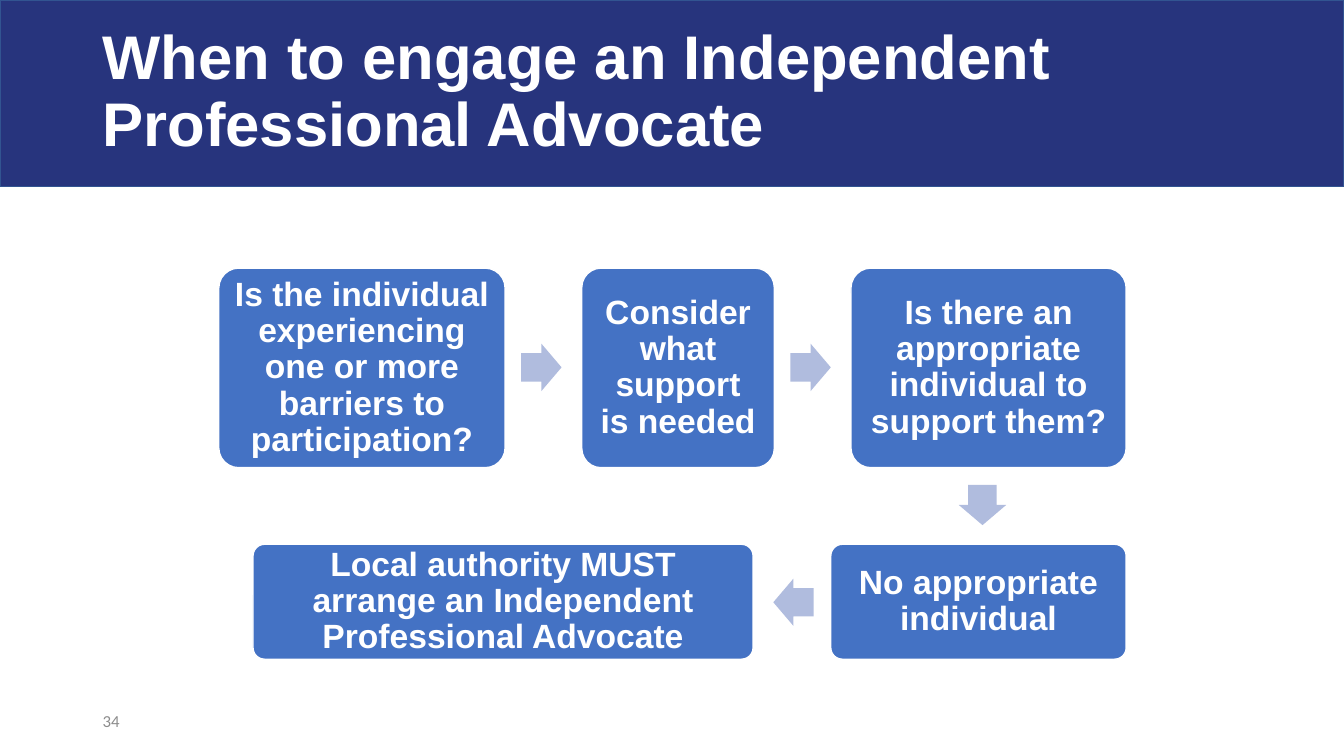
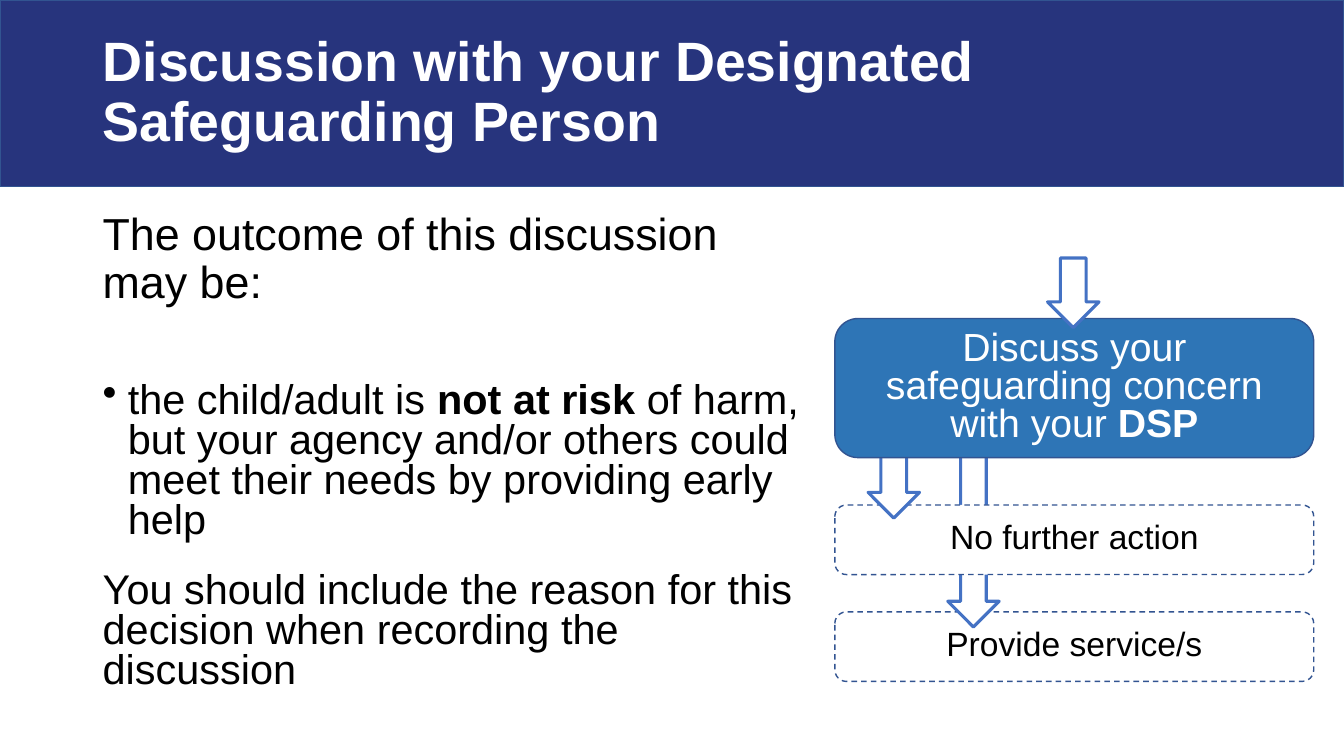
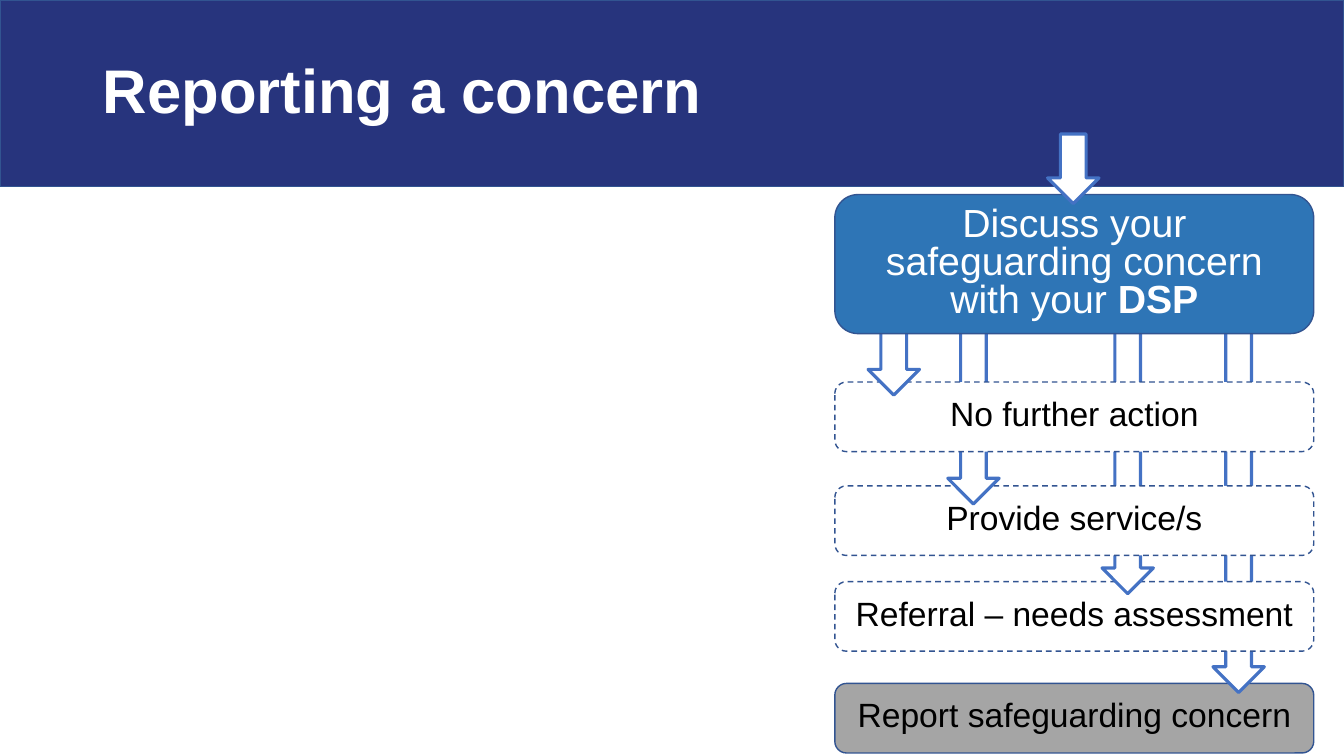
from dataclasses import dataclass

from lxml.etree import SubElement
from pptx import Presentation
from pptx.dml.color import RGBColor
from pptx.enum.dml import MSO_LINE
from pptx.enum.shapes import MSO_SHAPE as Shape
from pptx.enum.text import MSO_ANCHOR as Anchor, PP_ALIGN as Align
from pptx.oxml.ns import qn
from pptx.util import Inches, Pt

COLORS = {
    "navy": "27347D", "edge": "325491", "blue": "4472C4", "pale": "B0BCDE",
    "dsp": "2E75B6", "gray": "A5A5A5", "number": "8C8C8C",
    "white": "FFFFFF", "black": "000000",
}
LEFT = 0.92
CARD_LEFT, CARD_W, CARD_H = 8.28, 4.75, 0.69
DSP_H = 1.38
ARROW_W, ARROW_H = 0.51, 0.69


@dataclass(frozen=True)
class Step:
    text: str
    left: float
    top: float
    width: float
    height: float
    inset: float


@dataclass(frozen=True)
class FlowArrow:
    kind: Shape
    left: float
    top: float
    width: float
    height: float


@dataclass(frozen=True)
class Outcome:
    text: str
    top: float
    arrow_left: float
    arrow_tip: float
    fill: str = "white"
    dashed: bool = True


STEPS = [
    Step("Is the individual experiencing one or more barriers to participation?",
         2.17, 2.66, 2.84, 1.98, 0.16),
    Step("Consider what support is needed", 5.77, 2.66, 1.91, 1.98, 0.16),
    Step("Is there an appropriate individual to support them?",
         8.44, 2.66, 2.73, 1.98, 0.16),
    Step("No appropriate individual", 8.24, 5.4, 2.93, 1.14, 0.13),
    Step("Local authority MUST arrange an Independent Professional Advocate",
         2.51, 5.4, 4.96, 1.14, 0.13),
]
FLOW_ARROWS = [
    FlowArrow(Shape.RIGHT_ARROW, 5.17, 3.41, 0.4, 0.47),
    FlowArrow(Shape.RIGHT_ARROW, 7.84, 3.41, 0.4, 0.47),
    FlowArrow(Shape.DOWN_ARROW, 9.51, 4.81, 0.47, 0.4),
    FlowArrow(Shape.LEFT_ARROW, 7.67, 5.74, 0.4, 0.47),
]
DISCUSSION_OUTCOMES = [
    Outcome("No further action", 5.01, 8.61, 5.14),
    Outcome("Provide service/s", 6.07, 9.4, 6.22),
]
REPORTING_OUTCOMES = [
    Outcome("No further action", 3.79, 8.61, 3.92),
    Outcome("Provide service/s", 4.82, 9.4, 5.0),
    Outcome("Referral – needs assessment", 5.77, 10.93, 5.89),
    Outcome("Report safeguarding concern", 6.78, 12.03, 6.87, "gray", False),
]


def rgb(name: str) -> RGBColor:
    return RGBColor.from_string(COLORS[name])


def write(tf, *texts: str, size: float, color: str = "black", bold: bool = False,
          font: str = "Arial", align=Align.LEFT, anchor=Anchor.MIDDLE,
          spacing: float = 1.0, after: float = 0, bullets: tuple = ()) -> None:
    """Write one paragraph per text; ** switches bold, bullets lists bulleted indexes."""
    tf.word_wrap = True
    tf.vertical_anchor = anchor
    for i, text in enumerate(texts):
        p = tf.add_paragraph() if i else tf.paragraphs[0]
        p.alignment, p.line_spacing = align, spacing
        p.space_before, p.space_after = Pt(0), Pt(after)
        for j, part in enumerate(text.split("**")):
            if not part:
                continue
            r = p.add_run()
            r.text = part
            r.font.name, r.font.size = font, Pt(size)
            r.font.bold = bold or j % 2 == 1
            r.font.color.rgb = rgb(color)
        if i in bullets:
            pPr = p._p.get_or_add_pPr()
            pPr.set("marL", str(Inches(0.25)))
            pPr.set("indent", str(Inches(-0.25)))
            SubElement(pPr, qn("a:buChar")).set("char", "•")


def add_text(s, left: float, top: float, width: float, height: float,
             *texts: str, **fmt) -> None:
    box = s.shapes.add_textbox(Inches(left), Inches(top), Inches(width), Inches(height))
    write(box.text_frame, *texts, **fmt)


def add_box(s, kind, left: float, top: float, width: float, height: float,
            fill: str, line: str = "", weight: float = 1, dashed: bool = False):
    sp = s.shapes.add_shape(kind, Inches(left), Inches(top), Inches(width), Inches(height))
    sp.shadow.inherit = False
    sp.fill.solid()
    sp.fill.fore_color.rgb = rgb(fill)
    if line:
        sp.line.color.rgb = rgb(line)
        sp.line.width = Pt(weight)
        if dashed:
            sp.line.dash_style = MSO_LINE.DASH
    else:
        sp.line.fill.background()
    return sp


def add_titled_slide(prs, title: str, width: float, size: float = 44):
    s = prs.slides.add_slide(prs.slide_layouts[6])
    add_box(s, Shape.RECTANGLE, 0, 0, 13.33, 1.85, "navy", "edge")
    add_text(s, LEFT, 0.2, width, 1.45, title, size=size, color="white",
             bold=True, spacing=0.9)
    return s


def add_step(s, step: Step) -> None:
    sp = add_box(s, Shape.ROUNDED_RECTANGLE, step.left, step.top, step.width,
                 step.height, "blue", "white")
    sp.adjustments[0] = 0.1
    # A rounded rectangle already insets its text by 0.29 of the corner radius.
    margin = Inches(step.inset - 0.29 * 0.1 * min(step.width, step.height))
    tf = sp.text_frame
    tf.margin_left = tf.margin_right = tf.margin_top = tf.margin_bottom = margin
    write(tf, step.text, size=24, color="white", bold=True, align=Align.CENTER,
          spacing=0.9)


def add_flow_arrow(s, arrow: FlowArrow) -> None:
    sp = add_box(s, arrow.kind, arrow.left, arrow.top, arrow.width, arrow.height, "pale")
    sp.adjustments[0] = 0.6


def add_down_arrow(s, left: float, top: float, tip: float) -> None:
    add_box(s, Shape.DOWN_ARROW, left, top, ARROW_W, tip - top, "white", "blue", 2.25)


def add_card(s, text: str, top: float, height: float, fill: str, size: float,
             color: str = "black", dashed: bool = False) -> None:
    sp = add_box(s, Shape.ROUNDED_RECTANGLE, CARD_LEFT, top, CARD_W, height,
                 fill, "edge", dashed=dashed)
    write(sp.text_frame, text, size=size, color=color, align=Align.CENTER, spacing=0.8)


def add_outcomes(s, dsp_top: float, outcomes: list[Outcome]) -> None:
    """Stack the outcome cards from the back, so each arrow passes behind earlier cards."""
    for o in reversed(outcomes):
        add_card(s, o.text, o.top, CARD_H, o.fill, 24, dashed=o.dashed)
        add_down_arrow(s, o.arrow_left, dsp_top + DSP_H - 0.1, o.arrow_tip)
    add_card(s, "Discuss your safeguarding concern with your **DSP**", dsp_top, DSP_H,
             "dsp", 28, "white")
    top = dsp_top - 0.6
    add_down_arrow(s, 10.39, top, top + ARROW_H)


def add_advocate_slide(prs) -> None:
    s = add_titled_slide(prs, "When to engage an Independent Professional Advocate", 11.5)
    for step in STEPS:
        add_step(s, step)
    for arrow in FLOW_ARROWS:
        add_flow_arrow(s, arrow)
    add_text(s, LEFT, 6.95, 3, 0.4, "34", size=12, color="number", font="Calibri")


def add_discussion_slide(prs) -> None:
    s = add_titled_slide(prs, "Discussion with your Designated Safeguarding Person",
                         8.99, 39.6)
    add_text(s, LEFT, 3.75, 7.32, 3.31,
             "the child/adult is **not at risk **of harm, but your agency and/or "
             "others could meet their needs by providing early help",
             "You should include the reason for this decision when recording "
             "the discussion",
             size=29.6, anchor=Anchor.TOP, spacing=0.8, after=22, bullets=(0,))
    add_outcomes(s, 3.16, DISCUSSION_OUTCOMES)
    add_text(s, LEFT, 2.05, 6.86, 0.56, "The outcome of this discussion may be:",
             size=32, anchor=Anchor.TOP, spacing=0.9, after=12)


def add_reporting_slide(prs) -> None:
    s = add_titled_slide(prs, "Reporting a concern", 6.98)
    add_outcomes(s, 1.93, REPORTING_OUTCOMES)


def main() -> None:
    prs = Presentation()
    prs.slide_width, prs.slide_height = Inches(13.33), Inches(7.5)
    add_advocate_slide(prs)
    add_discussion_slide(prs)
    add_reporting_slide(prs)
    prs.save("out.pptx")


if __name__ == "__main__":
    main()
